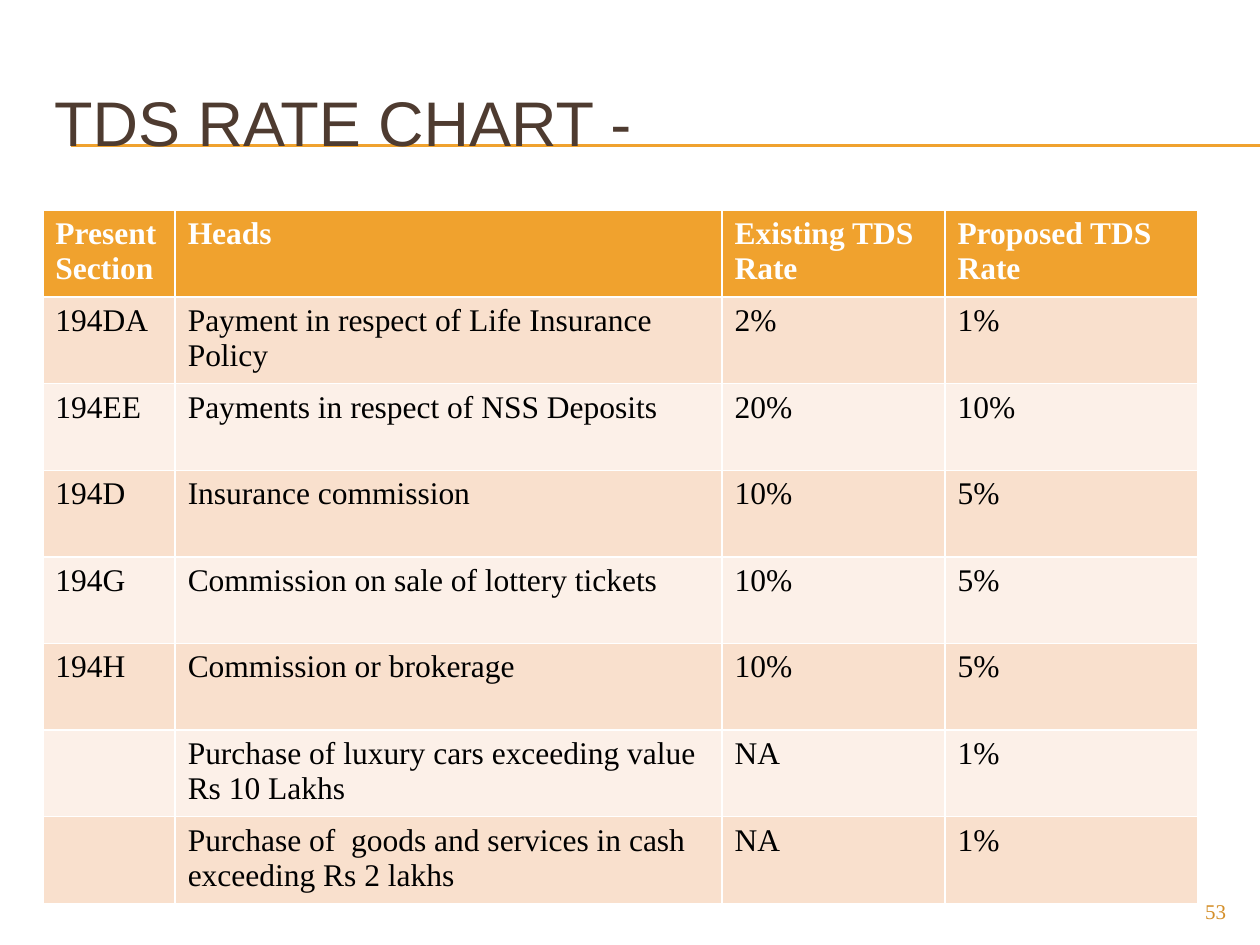
from lxml.etree import SubElement
from pptx import Presentation
from pptx.dml.color import RGBColor as Rgb
from pptx.enum.shapes import MSO_CONNECTOR as Link
from pptx.enum.text import MSO_ANCHOR as Anchor, PP_ALIGN as Align
from pptx.oxml.ns import qn
from pptx.util import Inches, Pt

TITLE = "TDS RATE CHART -"
PAGE = "53"
ROWS = [
    ("Present Section", "Heads", "Existing TDS Rate", "Proposed TDS Rate"),
    ("194DA", "Payment in respect of Life Insurance Policy", "2%", "1%"),
    ("194EE", "Payments in respect of NSS Deposits", "20%", "10%"),
    ("194D", "Insurance commission", "10%", "5%"),
    ("194G", "Commission on sale of lottery tickets", "10%", "5%"),
    ("194H", "Commission or brokerage", "10%", "5%"),
    ("", "Purchase of luxury cars exceeding value Rs 10 Lakhs", "NA", "1%"),
    ("", "Purchase of  goods and services in cash exceeding Rs 2 lakhs", "NA", "1%"),
]
WIDTHS = (1.05, 4.34, 1.77, 2.01)
HEIGHT = 5.5
RULES = (1.15, 1.16)
COLORS = {
    "gold": "F0A22E",
    "brown": "4E3B30",
    "page": "D48F29",
    "peach": "F9E0CD",
    "cream": "FCF0E8",
    "white": "FFFFFF",
    "black": "000000",
}
SERIF = "Times New Roman"


def color(name):
    return Rgb.from_string(COLORS[name])


def style(para, face, size, name, bold=False):
    font = para.font
    font.name, font.size, font.bold = face, Pt(size), bold
    font.color.rgb = color(name)


def add_rule(slide, y):
    rule = slide.shapes.add_connector(
        Link.STRAIGHT, Inches(0.56), Inches(y), Inches(10), Inches(y))
    rule.line.color.rgb = color("gold")
    rule.line.width = Pt(0.75)
    SubElement(rule._element.spPr, qn("a:effectLst"))


def add_title(slide):
    title = slide.shapes.title
    title.left, title.top = Inches(0.33), Inches(0.5)
    title.width, title.height = Inches(9.5), Inches(0.92)
    frame = title.text_frame
    frame.text = TITLE
    frame.vertical_anchor = Anchor.MIDDLE
    para = frame.paragraphs[0]
    para.alignment = Align.LEFT
    style(para, "Arial", 36, "brown")
    slide.shapes._spTree.append(title._element)


def add_rates(slide):
    table = slide.shapes.add_table(
        len(ROWS), len(WIDTHS), Inches(0.34), Inches(1.67),
        Inches(sum(WIDTHS)), Inches(HEIGHT)).table
    for col, width in zip(table.columns, WIDTHS):
        col.width = Inches(width)
    for r, row in enumerate(ROWS):
        head = r == 0
        fill = "gold" if head else ("cream", "peach")[r % 2]
        for c, text in enumerate(row):
            cell = table.cell(r, c)
            cell.text = text
            cell.fill.solid()
            cell.fill.fore_color.rgb = color(fill)
            style(cell.text_frame.paragraphs[0], SERIF, 18,
                  "white" if head else "black", head)


def add_page(slide):
    box = slide.shapes.add_textbox(
        Inches(9), Inches(7.08), Inches(0.83), Inches(0.27))
    frame = box.text_frame
    frame.word_wrap = True
    frame.text = PAGE
    para = frame.paragraphs[0]
    para.alignment = Align.RIGHT
    style(para, SERIF, 12, "page")


def main():
    deck = Presentation()
    deck.slide_width, deck.slide_height = Inches(10), Inches(7.5)
    slide = deck.slides.add_slide(deck.slide_layouts[5])
    for y in RULES:
        add_rule(slide, y)
    add_title(slide)
    add_rates(slide)
    add_page(slide)
    deck.save("out.pptx")


if __name__ == "__main__":
    main()
